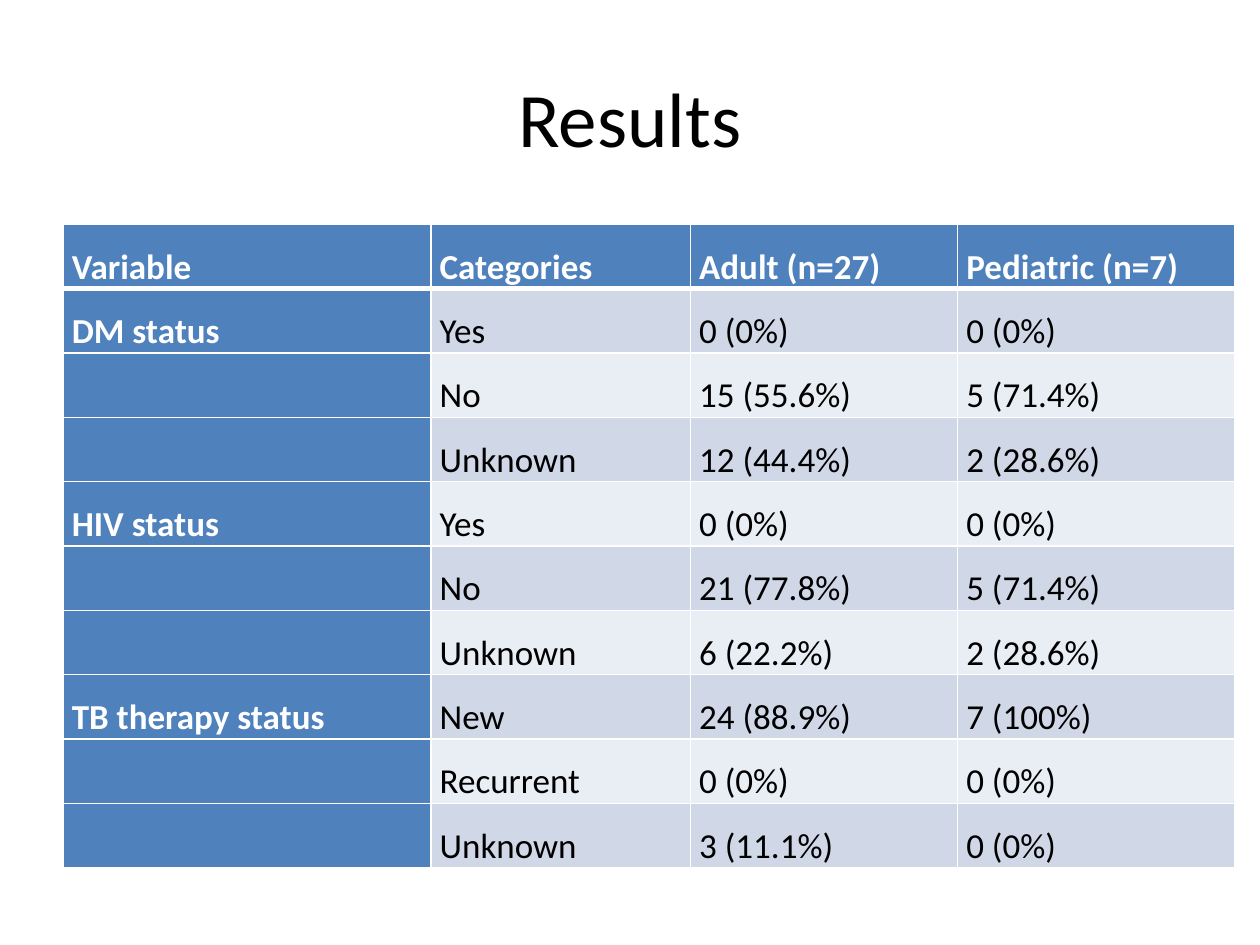
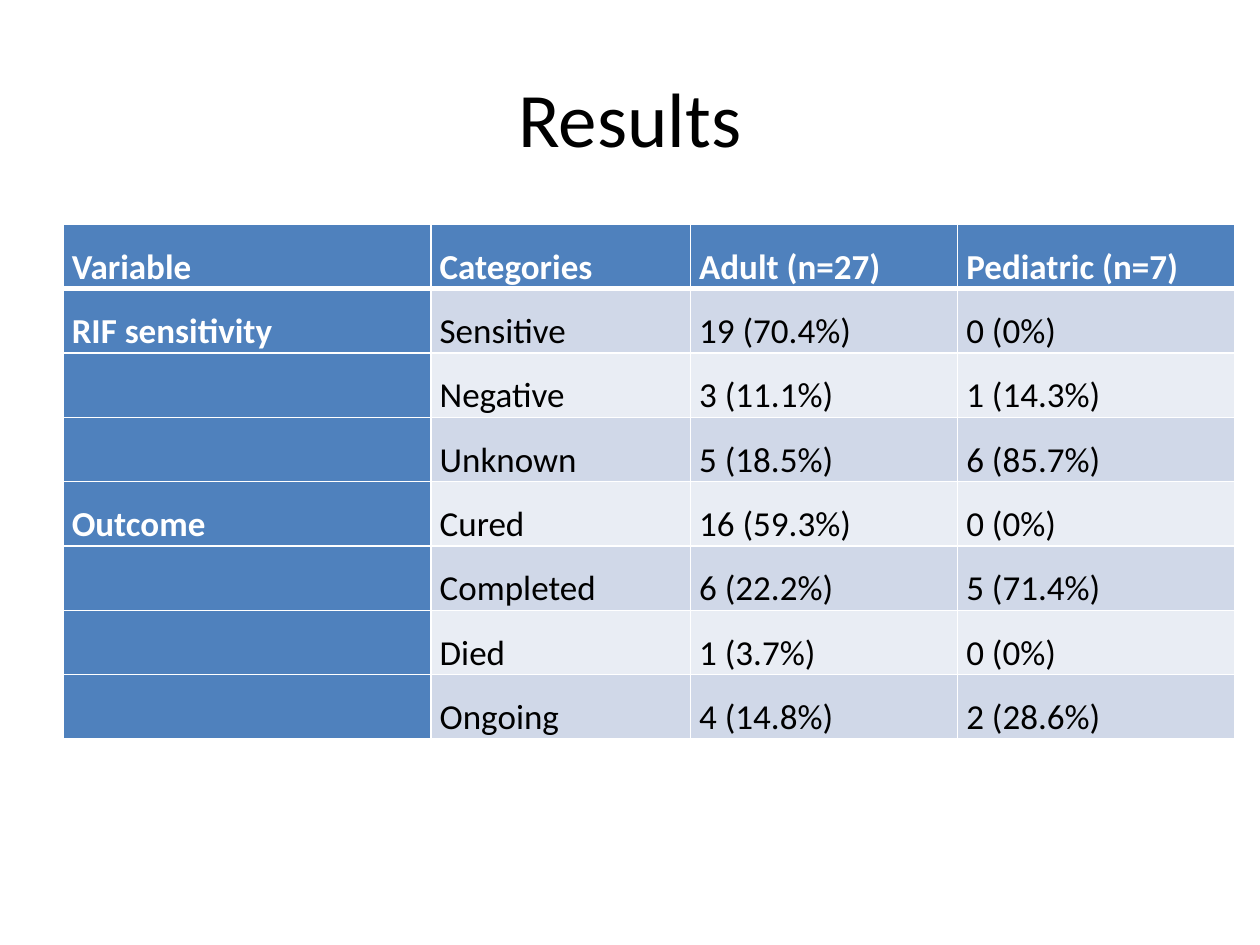
"""Build two slides that tabulate patient results by variable and age group."""
from lxml.etree import SubElement
from pptx import Presentation
from pptx.dml.color import RGBColor as Rgb
from pptx.enum.text import MSO_ANCHOR as Anchor, PP_ALIGN as Align
from pptx.oxml.ns import qn
from pptx.util import Inches, Pt

FONT = "Calibri"
COLORS = {
    "text": "000000",
    "light": "FFFFFF",
    "heading": "4F81BD",
    "odd_band": "D0D8E8",
    "even_band": "E9EDF4",
}
COLUMN_WIDTHS = (2.92, 2.06, 2.12, 2.2)
ROW_HEIGHT = 0.5
HEADINGS = ("Variable", "Categories", "Adult (n=27)", "Pediatric (n=7)")

STATUS_RESULTS = {
    "DM status": [
        ("Yes", "0 (0%)", "0 (0%)"),
        ("No", "15 (55.6%)", "5 (71.4%)"),
        ("Unknown", "12 (44.4%)", "2 (28.6%)"),
    ],
    "HIV status": [
        ("Yes", "0 (0%)", "0 (0%)"),
        ("No", "21 (77.8%)", "5 (71.4%)"),
        ("Unknown", "6 (22.2%)", "2 (28.6%)"),
    ],
    "TB therapy status": [
        ("New", "24 (88.9%)", "7 (100%)"),
        ("Recurrent", "0 (0%)", "0 (0%)"),
        ("Unknown", "3 (11.1%)", "0 (0%)"),
    ],
}
OUTCOME_RESULTS = {
    "RIF sensitivity": [
        ("Sensitive", "19 (70.4%)", "0 (0%)"),
        ("Negative", "3 (11.1%)", "1 (14.3%)"),
        ("Unknown", "5 (18.5%)", "6 (85.7%)"),
    ],
    "Outcome": [
        ("Cured", "16 (59.3%)", "0 (0%)"),
        ("Completed", "6 (22.2%)", "5 (71.4%)"),
        ("Died", "1 (3.7%)", "0 (0%)"),
        ("Ongoing", "4 (14.8%)", "2 (28.6%)"),
    ],
}


def style_font(font, size, color, bold=False):
    font.name = FONT
    font.size = Pt(size)
    font.bold = bold
    font.color.rgb = Rgb.from_string(COLORS[color])


def add_title(slide, text):
    title = slide.shapes.title
    title.left, title.top = Inches(0.5), Inches(0.3)
    title.width, title.height = Inches(9), Inches(1.25)
    frame = title.text_frame
    frame.text = text
    frame.vertical_anchor = Anchor.MIDDLE
    para = frame.paragraphs[0]
    para.alignment = Align.CENTER
    style_font(para.runs[0].font, 44, "text")


def add_borders(cell, top, bottom):
    properties = cell._tc.get_or_add_tcPr()
    for side, width in (("L", 1), ("R", 1), ("T", top), ("B", bottom)):
        line = SubElement(properties, qn(f"a:ln{side}"), w=str(Pt(width)))
        fill = SubElement(line, qn("a:solidFill"))
        SubElement(fill, qn("a:srgbClr"), val=COLORS["light"])


def fill_cell(cell, text, row, column):
    is_heading = row == 0 or column == 0
    band = "odd_band" if row % 2 else "even_band"
    add_borders(cell, top=3 if row == 1 else 1, bottom=3 if row == 0 else 1)
    cell.fill.solid()
    cell.fill.fore_color.rgb = Rgb.from_string(COLORS["heading" if is_heading else band])
    cell.margin_left = cell.margin_right = Inches(0.07)
    cell.margin_top = cell.margin_bottom = 0
    if text:
        cell.text_frame.text = text
        para = cell.text_frame.paragraphs[0]
        para.alignment = Align.JUSTIFY
        para.line_spacing = 1.5
        style_font(para.runs[0].font, 20, "light" if is_heading else "text", is_heading)


def table_rows(results):
    rows = [HEADINGS]
    for variable, categories in results.items():
        for index, values in enumerate(categories):
            rows.append(("" if index else variable, *values))
    return rows


def add_results_table(slide, results):
    rows = table_rows(results)
    table = slide.shapes.add_table(
        len(rows), len(HEADINGS), Inches(0.5), Inches(1.78),
        Inches(sum(COLUMN_WIDTHS)), Inches(ROW_HEIGHT * len(rows)),
    ).table
    for column, width in zip(table.columns, COLUMN_WIDTHS):
        column.width = Inches(width)
    for row, texts in enumerate(rows):
        for column, text in enumerate(texts):
            fill_cell(table.cell(row, column), text, row, column)


def main():
    deck = Presentation()
    deck.slide_width, deck.slide_height = Inches(10), Inches(7.5)
    title_only = deck.slide_layouts[5]
    for results in (STATUS_RESULTS, OUTCOME_RESULTS):
        slide = deck.slides.add_slide(title_only)
        add_title(slide, "Results")
        add_results_table(slide, results)
    deck.save("out.pptx")


if __name__ == "__main__":
    main()
